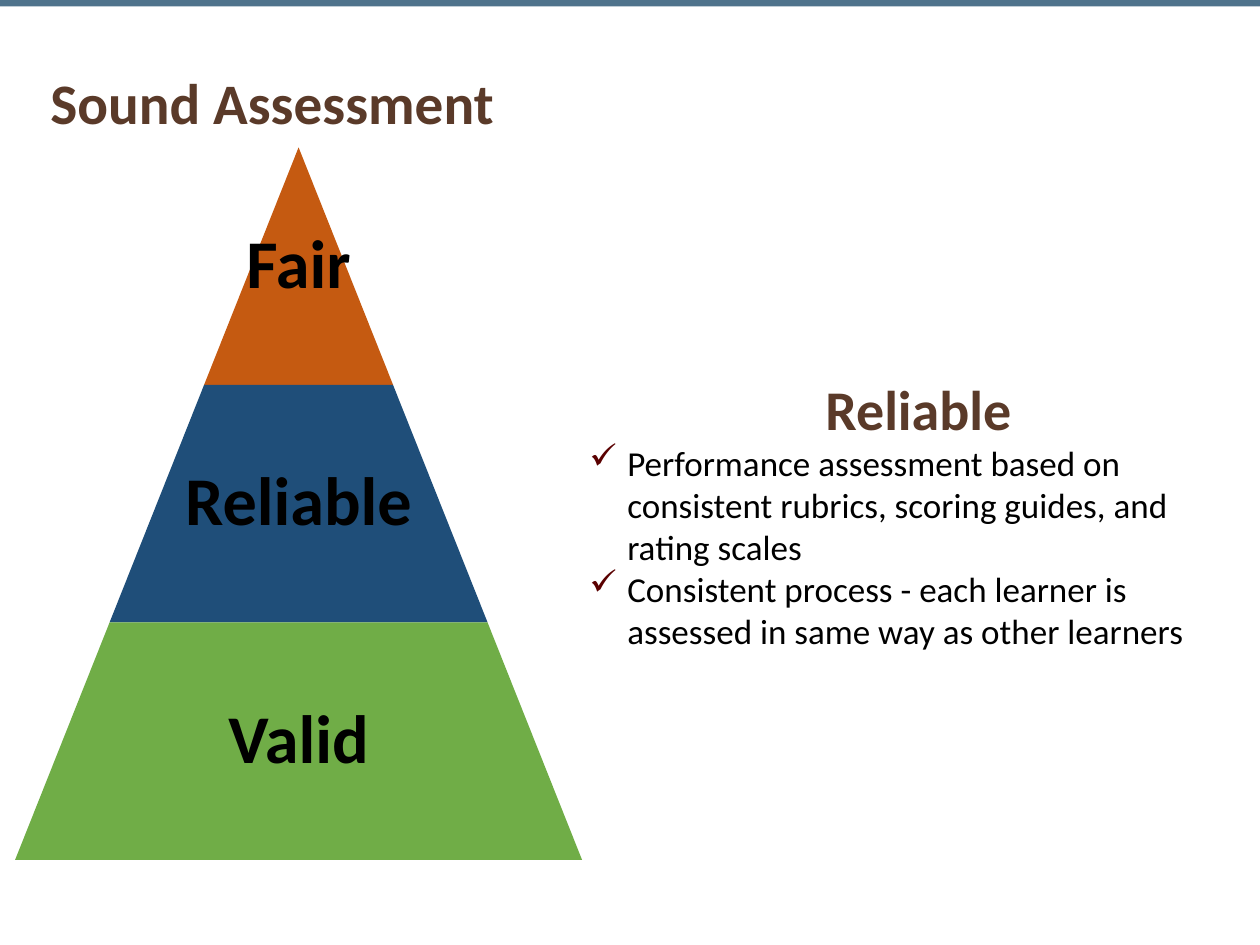
"""Build the Sound Assessment pyramid slide."""
from dataclasses import dataclass

from lxml import etree
from pptx import Presentation
from pptx import util as u
from pptx.dml.color import RGBColor
from pptx.enum import shapes, text
from pptx.oxml.ns import qn


@dataclass(frozen=True)
class Theme:
    """Font, colours and type sizes of the slide."""
    font: str = "Calibri"
    bar: str = "4F738C"
    heading: str = "5A3A29"
    body: str = "000000"
    check: str = "5A0000"
    title_size: float = 32.7
    label_size: float = 39
    heading_size: float = 32
    body_size: float = 20


@dataclass(frozen=True)
class Tier:
    """One level of the pyramid."""
    label: str
    fill: str
    label_share: float


THEME = Theme()
TIERS = (
    Tier("Fair", "C55A11", 1),
    Tier("Reliable", "1F4E79", 0.65),
    Tier("Valid", "70AD47", 0.65),
)
POINTS = (
    "Performance assessment based on consistent rubrics, scoring guides, and rating scales",
    "Consistent process - each learner is assessed in same way as other learners",
)
CENTER, TOP, TIER_HEIGHT, TIER_INSET = 2.37, 1.17, 1.885, 0.75


def add_span(para, words: str, size: float, color: str, bold: bool = False) -> None:
    """Add one formatted run to a paragraph."""
    span = para.add_run()
    span.text = words
    span.font.name = THEME.font
    span.font.size = u.Pt(size)
    span.font.bold = bold
    span.font.color.rgb = RGBColor.from_string(color)


def add_solid(page, kind, left: float, top: float, width: float, height: float, color: str):
    """Add a flat shape without outline or shadow."""
    shape = page.shapes.add_shape(
        kind, u.Inches(left), u.Inches(top), u.Inches(width), u.Inches(height))
    shape.shadow.inherit = False
    shape.fill.solid()
    shape.fill.fore_color.rgb = RGBColor.from_string(color)
    shape.line.fill.background()
    return shape


def add_box(page, left: float, top: float, width: float, height: float):
    """Add a wrapping text box and return its text frame."""
    box = page.shapes.add_textbox(
        u.Inches(left), u.Inches(top), u.Inches(width), u.Inches(height))
    box.text_frame.word_wrap = True
    return box.text_frame


def add_title(page, words: str) -> None:
    """Place and fill the title placeholder."""
    title = page.shapes.title
    title.left, title.top = u.Inches(0.3), u.Inches(0.48)
    title.width, title.height = u.Inches(6.12), u.Inches(0.65)
    frame = title.text_frame
    frame.auto_size = text.MSO_AUTO_SIZE.NONE
    frame.vertical_anchor = text.MSO_ANCHOR.TOP
    para = frame.paragraphs[0]
    para.alignment = text.PP_ALIGN.LEFT
    add_span(para, words, THEME.title_size, THEME.heading, True)


def add_tier(page, index: int, tier: Tier) -> None:
    """Draw one pyramid level with its centred label."""
    width = 2 * TIER_INSET * (index + 1)
    top = TOP + index * TIER_HEIGHT
    shape = add_solid(page, shapes.MSO_SHAPE.TRAPEZOID, CENTER - width / 2, top,
                      width, TIER_HEIGHT, tier.fill)
    shape.adjustments[0] = TIER_INSET / min(width, TIER_HEIGHT)
    label_width = width * tier.label_share
    frame = add_box(page, CENTER - label_width / 2, top, label_width, TIER_HEIGHT)
    frame.vertical_anchor = text.MSO_ANCHOR.MIDDLE
    frame.margin_left = frame.margin_right = u.Inches(0.05)
    para = frame.paragraphs[0]
    para.alignment = text.PP_ALIGN.CENTER
    para.line_spacing = 0.9
    add_span(para, tier.label, THEME.label_size, THEME.body, True)


def add_check(para) -> None:
    """Give a paragraph a hanging check mark."""
    properties = para._p.get_or_add_pPr()
    indent = u.Inches(0.3)
    properties.set("marL", str(indent))
    properties.set("indent", str(-indent))
    color = etree.SubElement(properties, qn("a:buClr"))
    etree.SubElement(color, qn("a:srgbClr")).set("val", THEME.check)
    etree.SubElement(properties, qn("a:buChar")).set("char", "✓")


def add_details(page, heading: str, points: tuple[str, ...]) -> None:
    """Write the heading and its checked points."""
    frame = add_box(page, 4.58, 2.92, 5.42, 2.32)
    para = frame.paragraphs[0]
    para.alignment = text.PP_ALIGN.CENTER
    add_span(para, heading, THEME.heading_size, THEME.heading, True)
    for point in points:
        para = frame.add_paragraph()
        add_check(para)
        add_span(para, point, THEME.body_size, THEME.body)


def main() -> None:
    """Assemble and save the deck."""
    deck = Presentation()
    deck.slide_width, deck.slide_height = u.Inches(10), u.Inches(7.5)
    page = deck.slides.add_slide(deck.slide_layouts.get_by_name("Title Only"))
    add_solid(page, shapes.MSO_SHAPE.RECTANGLE, 0, 0, 10, 0.05, THEME.bar)
    add_title(page, "Sound Assessment")
    for index, tier in enumerate(TIERS):
        add_tier(page, index, tier)
    add_details(page, "Reliable", POINTS)
    deck.save("out.pptx")


if __name__ == "__main__":
    main()
